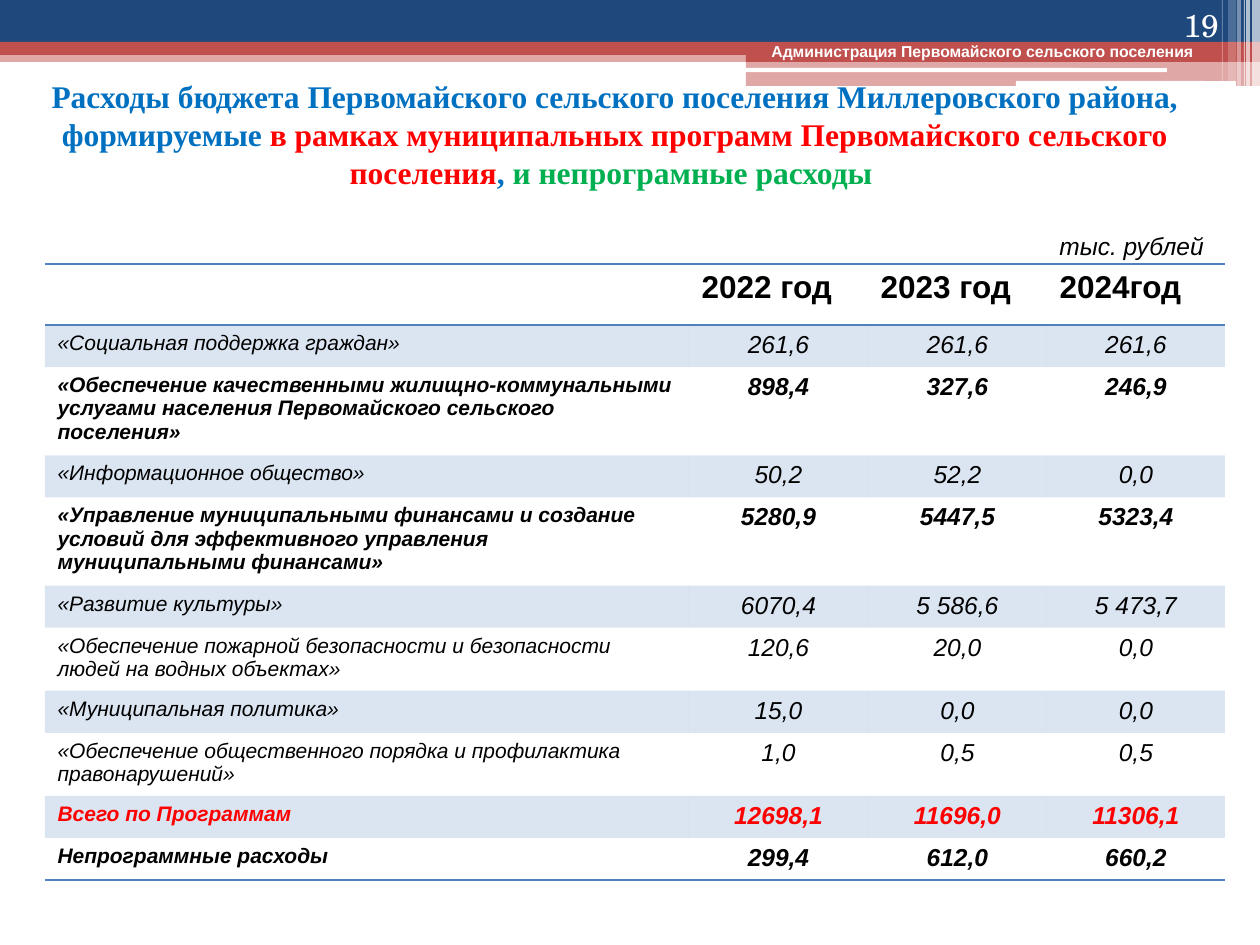
from lxml import etree
from pptx import Presentation
from pptx.dml.color import RGBColor
from pptx.enum.shapes import MSO_SHAPE
from pptx.enum.text import MSO_ANCHOR, PP_ALIGN
from pptx.oxml.ns import qn
from pptx.util import Emu, Pt

RECT, ROUND = MSO_SHAPE.RECTANGLE, MSO_SHAPE.ROUNDED_RECTANGLE
TOP, BOTTOM = MSO_ANCHOR.TOP, MSO_ANCHOR.BOTTOM
LEFT, CENTER, RIGHT = PP_ALIGN.LEFT, PP_ALIGN.CENTER, PP_ALIGN.RIGHT

WHITE = RGBColor(0xFF, 0xFF, 0xFF)
BLACK = RGBColor(0, 0, 0)
NAVY = RGBColor(0x1F, 0x49, 0x7D)
BRICK = RGBColor(0xC0, 0x50, 0x4D)
STEEL = RGBColor(0x4F, 0x81, 0xBD)
BLUE = RGBColor(0x00, 0x70, 0xC0)
RED = RGBColor(0xFF, 0, 0)
GREEN = RGBColor(0x00, 0xB0, 0x50)

PLAIN_TABLE = "{2D5ABB26-0587-4C30-8999-92F81FD0307C}"
HEADINGS = ["", "2022 год", "2023 год", "2024год"]
# name, values by year, bold, colour
PROGRAMMES = [
    ("«Социальная поддержка граждан»", "261,6", "261,6", "261,6", False, BLACK),
    ("«Обеспечение качественными жилищно-коммунальными услугами населения "
     "Первомайского сельского поселения»", "898,4", "327,6", "246,9", True, BLACK),
    ("«Информационное общество»", "50,2", "52,2", "0,0", False, BLACK),
    ("«Управление муниципальными финансами и создание условий для эффективного "
     "управления муниципальными финансами»", "5280,9", "5447,5", "5323,4", True, BLACK),
    ("«Развитие культуры»", "6070,4", "5 586,6", "5 473,7", False, BLACK),
    ("«Обеспечение пожарной безопасности и безопасности людей на водных объектах»",
     "120,6", "20,0", "0,0", False, BLACK),
    ("«Муниципальная политика»", "15,0", "0,0", "0,0", False, BLACK),
    ("«Обеспечение общественного порядка и профилактика правонарушений»",
     "1,0", "0,5", "0,5", False, BLACK),
    ("Всего по Программам", "12698,1", "11696,0", "11306,1", True, RED),
    ("Непрограммные расходы", "299,4", "612,0", "660,2", True, BLACK),
]


def px(length):
    return Emu(round(length * 914400 / 126))


def paint(fill, color, opacity=100):
    fill.solid()
    fill.fore_color.rgb = color
    if opacity < 100:
        tone = fill._xPr.find(qn("a:solidFill"))[0]
        etree.SubElement(tone, qn("a:alpha"), val=str(opacity * 1000))


def add_bar(page, left, top, width, height, color, opacity=100, kind=RECT):
    bar = page.shapes.add_shape(kind, px(left), px(top), px(width), px(height))
    bar.shadow.inherit = False
    bar.line.fill.background()
    paint(bar.fill, color, opacity)


def write(frame, spans, size, font="Arial", bold=False, italic=False, align=LEFT):
    """Fill the first paragraph with (text, colour) spans."""
    para = frame.paragraphs[0]
    para.alignment = align
    for text, color in spans:
        span = para.add_run()
        span.text = text
        span.font.name, span.font.size = font, Pt(size)
        span.font.bold, span.font.italic = bold, italic
        span.font.color.rgb = color


def add_text(page, left, top, width, height, spans, size, anchor=TOP, **form):
    box = page.shapes.add_textbox(px(left), px(top), px(width), px(height))
    box.text_frame.word_wrap = True
    box.text_frame.vertical_anchor = anchor
    write(box.text_frame, spans, size, **form)


def add_header(page, left, top, width):
    # Full-width bands
    add_bar(page, left, top + 50, width, 12, BRICK, 50)
    add_bar(page, left, top, width, 43, NAVY)
    add_bar(page, left, top + 42, width, 13, BRICK)
    # Right-hand block and its white slits
    right = left + width
    add_bar(page, right - 514, top + 49, 514, 13, BRICK)
    add_bar(page, right - 514, top + 61, 514, 25, BRICK, 50)
    add_bar(page, right - 515, top + 68, 422, 4, WHITE, kind=ROUND)
    add_bar(page, right - 244, top + 81, 220, 5, WHITE, kind=ROUND)
    # Fading stripes: distance from the right edge, width, height, opacity
    for offset, thick, height, opacity in [
            (8, 8, 86, 65), (14, 4, 86, 65), (16, 1, 86, 60),
            (23, 4, 86, 40), (32, 8, 81, 20), (38, 1, 81, 30)]:
        add_bar(page, right - offset, top, thick, height, WHITE, opacity)
    # Owner and page number
    add_text(page, right - 501, top + 36, 460, 50,
             [("Администрация Первомайского сельского поселения", WHITE)], 9, bold=True)
    add_text(page, right - 134, top, 105, 50, [("19", WHITE)], 18,
             anchor=BOTTOM, font="TeX Gyre Schola", align=RIGHT)


def add_title(page, left, top, width, height):
    add_text(page, left, top, width, height, [
        ("Расходы бюджета Первомайского сельского поселения Миллеровского района, "
         "формируемые ", BLUE),
        ("в рамках муниципальных программ Первомайского сельского поселения", RED),
        (", ", BLUE),
        ("и непрограмные расходы ", GREEN),
    ], 18, font="Times New Roman", bold=True, align=CENTER)


def add_rule(cell, side):
    """Draw a 1 pt border; borders come before the fill in the cell's XML."""
    props = cell._tc.get_or_add_tcPr()
    line = etree.Element(qn("a:" + side), w=str(Pt(1)))
    solid = etree.SubElement(line, qn("a:solidFill"))
    etree.SubElement(solid, qn("a:srgbClr"), val=str(STEEL))
    props.insert(len(props.findall(qn("a:lnT"))), line)


def add_budget_table(page, left, top, widths):
    # Programme rows start low and grow to fit their text
    heights = [61] + [20] * len(PROGRAMMES)
    frame = page.shapes.add_table(len(heights), len(widths), px(left), px(top),
                                  px(sum(widths)), px(sum(heights)))
    table = frame.table
    table.horz_banding = False
    table._tbl.tblPr.find(qn("a:tableStyleId")).text = PLAIN_TABLE
    for column, width in zip(table.columns, widths):
        column.width = px(width)
    for row, height in zip(table.rows, heights):
        row.height = px(height)

    # Headings
    for index, heading in enumerate(HEADINGS):
        cell = table.cell(0, index)
        cell.fill.background()
        if heading:
            write(cell.text_frame, [(heading, BLACK)], 18, bold=True)
        add_rule(cell, "lnT")
        add_rule(cell, "lnB")

    # Programmes, every other row tinted
    for number, (*texts, bold, color) in enumerate(PROGRAMMES, 1):
        for index, text in enumerate(texts):
            cell = table.cell(number, index)
            if number % 2:
                paint(cell.fill, STEEL, 20)
            else:
                cell.fill.background()
            write(cell.text_frame, [(text, color)], 14 if index else 12, bold=bold,
                  italic=True, align=CENTER if index else LEFT)
            if number == len(PROGRAMMES):
                add_rule(cell, "lnB")

    # Unit of measure above the last column
    add_text(page, left + sum(widths) - 178, top - 39, 179, 43,
             [("тыс. рублей", BLACK)], 14, italic=True)


def main():
    deck = Presentation()
    deck.slide_width, deck.slide_height = px(1260), px(945)
    page = deck.slides.add_slide(deck.slide_layouts[6])
    add_header(page, 0, 0, 1260)
    add_title(page, 0, 71, 1230, 159)
    add_budget_table(page, 45, 264, [644, 179, 179, 178])
    deck.save("out.pptx")


if __name__ == "__main__":
    main()
